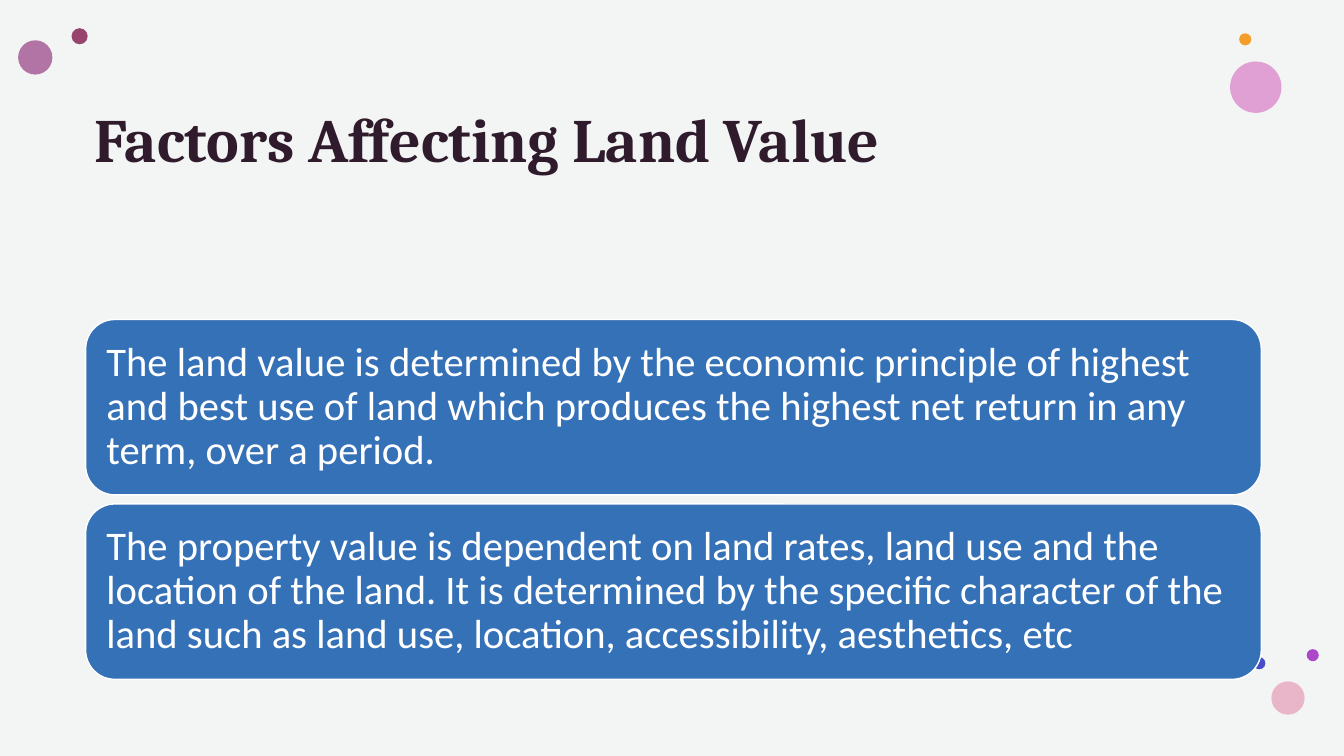
from lxml import etree
from pptx import Presentation
from pptx.dml.color import RGBColor
from pptx.enum.shapes import MSO_SHAPE
from pptx.enum.text import MSO_ANCHOR, PP_ALIGN
from pptx.oxml.ns import qn
from pptx.util import Inches, Pt

OVAL, ROUNDED = MSO_SHAPE.OVAL, MSO_SHAPE.ROUNDED_RECTANGLE
TOP, MIDDLE = MSO_ANCHOR.TOP, MSO_ANCHOR.MIDDLE
LEFT = PP_ALIGN.LEFT

TITLE = "Factors Affecting Land Value"
FACTORS = [
    "The land value is determined by the economic principle of highest and best "
    "use of land which produces the highest net return in any term, over a period.",
    "The property value is dependent on land rates, land use and the location of "
    "the land. It is determined by the specific character of the land such as "
    "land use, location, accessibility, aesthetics, etc",
]
# left, top, diameter, colour, opacity in percent
DOTS = [
    (0.71, 0.28, 0.16, "97446E", 100),
    (12.2, 0.61, 0.51, "DA80C8", 72),
    (12.29, 0.33, 0.12, "F39E29", 100),
    (0.18, 0.4, 0.34, "B174A5", 100),
    (12.96, 6.44, 0.12, "AD47C9", 100),
    (12.61, 6.76, 0.33, "E9B5C9", 100),
    (12.43, 6.52, 0.12, "474DC9", 100),
]
BACKGROUND, TITLE_COLOR, CARD_COLOR, WHITE = "F2F5F4", "301B2C", "3571B7", "FFFFFF"
CARD_LEFT, CARD_TOP, CARD_W, CARD_H, CARD_GAP = 0.85, 3.17, 11.66, 1.74, 0.09
CARD_INSET = 0.12


def set_fill(fill, color):
    fill.solid()
    fill.fore_color.rgb = RGBColor.from_string(color)


def add_shape(slide, kind, left, top, width, height, color):
    sp = slide.shapes.add_shape(kind, Inches(left), Inches(top), Inches(width), Inches(height))
    sp.shadow.inherit = False
    set_fill(sp.fill, color)
    sp.line.fill.background()
    return sp


def add_dot(slide, left, top, size, color, opacity):
    sp = add_shape(slide, OVAL, left, top, size, size, color)
    if opacity < 100:
        rgb = sp.fill._xPr.find(qn("a:solidFill")).find(qn("a:srgbClr"))
        etree.SubElement(rgb, qn("a:alpha")).set("val", str(opacity * 1000))


def write_text(tf, text, font, size, color, anchor, bold=False):
    tf.word_wrap = True
    tf.vertical_anchor = anchor
    p = tf.paragraphs[0]
    p.text = text
    p.alignment = LEFT
    p.line_spacing = 0.9
    p.font.name = font
    p.font.size = Pt(size)
    p.font.bold = bold
    p.font.color.rgb = RGBColor.from_string(color)


def add_card(slide, index, text):
    top = CARD_TOP + index * (CARD_H + CARD_GAP)
    sp = add_shape(slide, ROUNDED, CARD_LEFT, top, CARD_W, CARD_H, CARD_COLOR)
    set_fill(sp.line.fill, WHITE)
    sp.line.width = Pt(1)
    tf = sp.text_frame
    tf.margin_left = tf.margin_right = Inches(CARD_INSET)
    tf.margin_top = tf.margin_bottom = Inches(CARD_INSET)
    write_text(tf, text, "Calibri", 29, WHITE, MIDDLE)


def main():
    prs = Presentation()
    prs.slide_width, prs.slide_height = Inches(13.33), Inches(7.5)
    slide = prs.slides.add_slide(prs.slide_layouts[6])
    set_fill(slide.background.fill, BACKGROUND)

    for dot in DOTS:
        add_dot(slide, *dot)

    title = slide.shapes.add_textbox(Inches(0.84), Inches(1.04), Inches(11.78), Inches(1.97))
    write_text(title.text_frame, TITLE, "Cambria", 44, TITLE_COLOR, TOP, bold=True)

    for index, text in enumerate(FACTORS):
        add_card(slide, index, text)

    prs.save("out.pptx")


if __name__ == "__main__":
    main()
